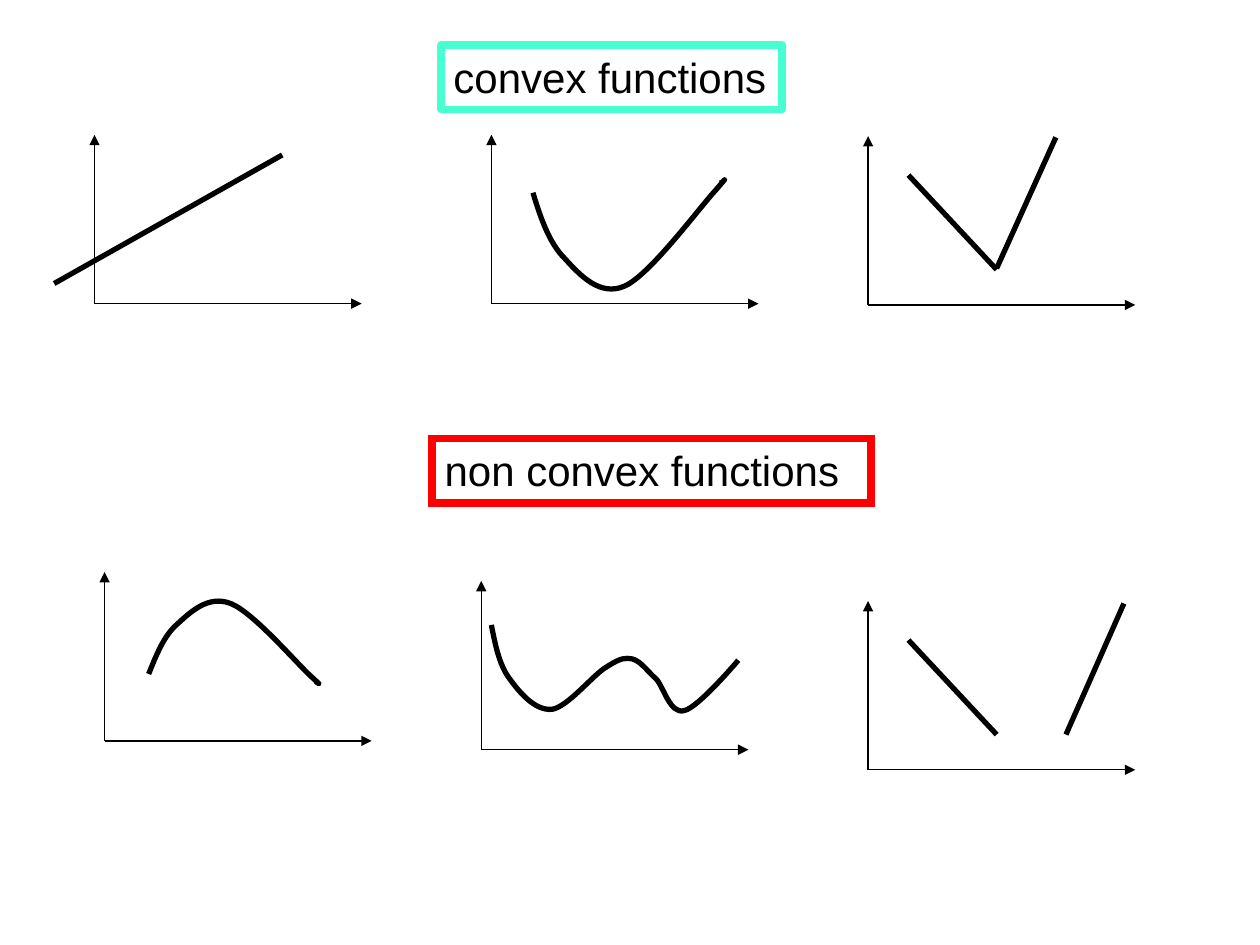
from collections import namedtuple
from lxml.etree import SubElement
from pptx import Presentation
from pptx.dml.color import RGBColor
from pptx.enum.shapes import MSO_CONNECTOR as Connector
from pptx.oxml.ns import qn
from pptx.util import Inches, Pt

BLACK = "000000"
AXIS_WIDTH, AXIS_HEIGHT = 2.12, 1.34
THIN, THICK = 0.75, 3

Curve = namedtuple("Curve", "top_left bottom_right controls")

FALLING = [(0.32, 1.03), (1.02, 0.28)]
VALLEY = Curve((0.33, 0.98), (1.85, 0.11), [
    (0.33, 0.88),
    (0.39, 0.68), (0.46, 0.48), (0.58, 0.36),
    (0.7, 0.23), (0.86, 0.05), (1.06, 0.14),
    (1.26, 0.23), (1.65, 0.76), (1.78, 0.9),
    (1.9, 1.04), (1.83, 0.96), (1.83, 0.96),
    (1.83, 0.98), (1.83, 0.98), (1.83, 0.98)])
HILL = Curve((0.35, 1.11), (1.7, 0.45), [
    (0.35, 0.53),
    (0.41, 0.68), (0.47, 0.83), (0.57, 0.92),
    (0.68, 1.02), (0.82, 1.16), (1.0, 1.09),
    (1.18, 1.02), (1.52, 0.62), (1.64, 0.51),
    (1.75, 0.41), (1.68, 0.47), (1.68, 0.47),
    (1.69, 0.46), (1.69, 0.45), (1.69, 0.45)])
WAVE = Curve((0.08, 0.99), (2.04, 0.3), [
    (0.08, 0.99),
    (0.11, 0.84), (0.14, 0.68), (0.22, 0.57),
    (0.3, 0.46), (0.42, 0.31), (0.56, 0.32),
    (0.69, 0.34), (0.89, 0.6), (1.0, 0.66),
    (1.11, 0.73), (1.14, 0.73), (1.2, 0.72),
    (1.27, 0.7), (1.32, 0.62), (1.39, 0.56),
    (1.45, 0.49), (1.5, 0.28), (1.61, 0.31),
    (1.72, 0.33), (2.04, 0.71), (2.04, 0.71)])

PLOTS = [
    ((0.75, 2.41), [[(-0.32, 0.16), (1.49, 1.18)]]),
    ((3.9, 2.41), [VALLEY]),
    ((6.89, 2.42), [FALLING, [(1.49, 1.33), (1.02, 0.29)]]),
    ((0.83, 5.88), [HILL]),
    ((3.82, 5.95), [WAVE]),
    ((6.89, 6.11), [FALLING, [(2.03, 1.32), (1.57, 0.28)]]),
]


def color(hex_code):
    """Turn a hex string into a colour."""
    return RGBColor.from_string(hex_code)


def style_line(line, hex_code, width):
    """Give a line its colour and width in points."""
    line.color.rgb = color(hex_code)
    line.width = Pt(width)


def place(origin, point):
    """Map a plot point, measured right and up from its origin, to the slide."""
    return Inches(origin[0] + point[0]), Inches(origin[1] - point[1])


def add_segment(plot, origin, start, end, width, arrow=False):
    """Draw a straight line, with an arrowhead at its end if asked."""
    segment = plot.shapes.add_connector(
        Connector.STRAIGHT, *place(origin, start), *place(origin, end))
    style_line(segment.line, BLACK, width)
    if arrow:
        SubElement(segment.line._get_or_add_ln(), qn("a:tailEnd"), type="triangle")
    SubElement(segment._element.spPr, qn("a:effectLst"))


def add_curve(plot, origin, curve):
    """Draw a smooth open curve of chained cubic pieces in its bounding box."""
    corner = place(origin, curve.top_left)
    builder = plot.shapes.build_freeform(*corner)
    builder.add_line_segments([place(origin, curve.bottom_right)], close=False)
    outline = builder.convert_to_shape()
    outline.fill.background()
    outline.shadow.inherit = False
    style_line(outline.line, BLACK, THICK)
    SubElement(outline.line._get_or_add_ln(), qn("a:round"))

    track = next(outline._element.iter(qn("a:path")))
    for command in list(track):
        track.remove(command)

    def add_command(name, points):
        """Append one drawing command with its points."""
        command = SubElement(track, qn(name))
        for point in points:
            x, y = place(origin, point)
            SubElement(command, qn("a:pt"), x=str(x - corner[0]), y=str(y - corner[1]))

    add_command("a:moveTo", curve.controls[:1])
    for i in range(1, len(curve.controls), 3):
        add_command("a:cubicBezTo", curve.controls[i:i + 3])


def add_plot(slide, origin, graphs):
    """Draw a pair of axes and the graphs on them as one group."""
    plot = slide.shapes.add_group_shape()
    for tip in ((AXIS_WIDTH, 0), (0, AXIS_HEIGHT)):
        add_segment(plot, origin, (0, 0), tip, THIN, arrow=True)
    for graph in graphs:
        if isinstance(graph, Curve):
            add_curve(plot, origin, graph)
        else:
            add_segment(plot, origin, *graph, THICK)


def add_heading(slide, text, left, top, width, border, join):
    """Add a framed heading with the given corner join."""
    heading = slide.shapes.add_textbox(
        Inches(left), Inches(top), Inches(width), Inches(0.51))
    style_line(heading.line, border, 4.5)
    SubElement(heading.line._get_or_add_ln(), qn(f"a:{join}"))
    heading.text_frame.word_wrap = True
    paragraph = heading.text_frame.paragraphs[0]
    paragraph.text = text
    paragraph.font.name = "Arial"
    paragraph.font.size = Pt(24)
    paragraph.font.color.rgb = color(BLACK)


def main():
    """Build the slide and save it."""
    deck = Presentation()
    deck.slide_width, deck.slide_height = Inches(10), Inches(7.5)
    slide = deck.slides.add_slide(deck.slide_layouts[6])
    add_heading(slide, "convex functions", 3.5, 0.36, 2.71, "47FFD1", "round")
    add_heading(slide, "non convex functions", 3.43, 3.48, 3.48, "FF0000", "miter")
    for origin, graphs in PLOTS:
        add_plot(slide, origin, graphs)
    deck.save("out.pptx")


if __name__ == "__main__":
    main()
